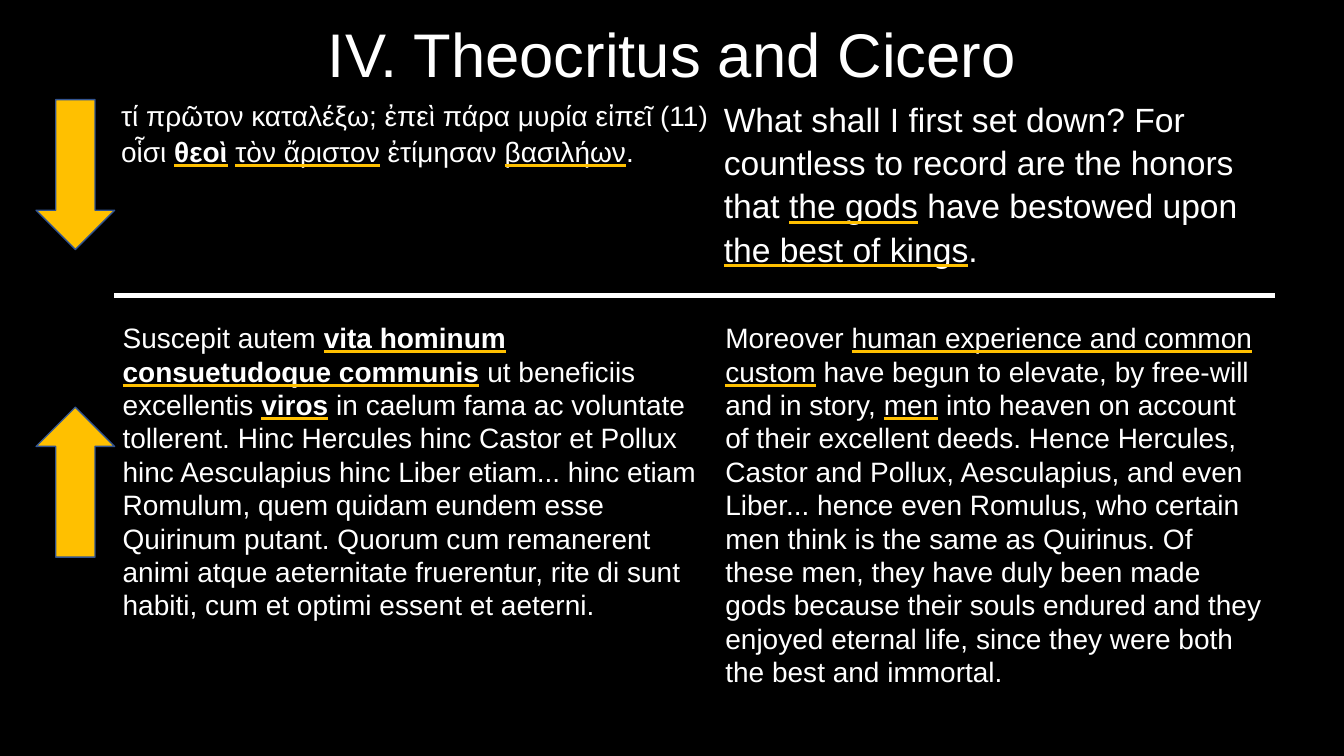
from dataclasses import dataclass
from typing import NamedTuple

from lxml.etree import SubElement
from pptx import Presentation
from pptx.dml.color import RGBColor
from pptx.enum.shapes import MSO_SHAPE
from pptx.enum.text import MSO_ANCHOR, MSO_UNDERLINE, PP_ALIGN
from pptx.oxml.ns import qn
from pptx.util import Cm, Pt


@dataclass(frozen=True)
class Theme:
    font: str = "Arial"
    paper: str = "000000"
    ink: str = "FFFFFF"
    accent: str = "FFC000"
    outline: str = "325491"
    title_pt: int = 44
    large_pt: int = 24
    body_pt: int = 20
    gap_pt: int = 8
    grid_pt: float = 1
    divider_pt: float = 4.5


class Span(NamedTuple):
    text: str
    marked: bool = False
    bold: bool = False


class Passage(NamedTuple):
    row: int
    col: int
    size: int
    spacing: float
    inset: float
    lines: list[list[Span]]


class Arrow(NamedTuple):
    kind: MSO_SHAPE
    top: float


THEME = Theme()
COLUMN_WIDTHS = (15.19, 14.02)
ROW_HEIGHTS = (4.37, 0.64, 0.64, 10.43)
ARROWS = (Arrow(MSO_SHAPE.DOWN_ARROW, 2.51), Arrow(MSO_SHAPE.UP_ARROW, 10.26))

PASSAGES = (
    Passage(0, 0, THEME.body_pt, 1.15, 0.15, [
        [Span("τί πρῶτον καταλέξω; ἐπεὶ πάρα μυρία εἰπεῖ (11)")],
        [Span("οἷσι "), Span("θεοὶ", True, True), Span(" "),
         Span("τὸν ἄριστον", True), Span(" ἐτίμησαν "),
         Span("βασιλήων", True), Span(".")],
    ]),
    Passage(0, 1, THEME.large_pt, 1.15, 0.15, [[
        Span("What shall I first set down? For countless to record are "
             "the honors that "),
        Span("the gods", True), Span(" have bestowed upon "),
        Span("the best of kings", True), Span("."),
    ]]),
    Passage(3, 0, THEME.body_pt, 1.07, 0.19, [[
        Span("Suscepit autem "),
        Span("vita hominum consuetudoque communis", True, True),
        Span(" ut beneficiis excellentis "), Span("viros", True, True),
        Span(" in caelum fama ac voluntate tollerent. Hinc Hercules hinc "
             "Castor et Pollux hinc Aesculapius hinc Liber etiam... hinc "
             "etiam Romulum, quem quidam eundem esse Quirinum putant. Quorum "
             "cum remanerent animi atque aeternitate fruerentur, rite di sunt "
             "habiti, cum et optimi essent et aeterni."),
    ]]),
    Passage(3, 1, THEME.body_pt, 1.07, 0.19, [[
        Span("Moreover "), Span("human experience and common custom", True),
        Span(" have begun to elevate, by free-will and in story, "),
        Span("men", True),
        Span(" into heaven on account of their excellent deeds. Hence "
             "Hercules, Castor and Pollux, Aesculapius, and even Liber... "
             "hence even Romulus, who certain men think is the same as "
             "Quirinus. Of these men, they have duly been made gods because "
             "their souls endured and they enjoyed eternal life, since they "
             "were both the best and immortal."),
    ]]),
)


def rgb(color: str) -> RGBColor:
    return RGBColor.from_string(color)


def add_solid_fill(parent, color: str) -> None:
    fill = SubElement(parent, qn("a:solidFill"))
    SubElement(fill, qn("a:srgbClr"), val=color)


def set_font(font, size: float) -> None:
    font.name = THEME.font
    font.size = Pt(size)
    font.color.rgb = rgb(THEME.ink)


def add_span(p, span: Span) -> None:
    r = p.add_run()
    r.text = span.text
    if span.bold:
        r.font.bold = True
    if span.marked:
        r.font.underline = MSO_UNDERLINE.HEAVY_LINE
        add_solid_fill(SubElement(r.font._element, qn("a:uFill")), THEME.accent)


def write_passage(cell, passage: Passage) -> None:
    cell.margin_left = cell.margin_right = Cm(passage.inset)
    tf = cell.text_frame
    for i, line in enumerate(passage.lines):
        p = tf.add_paragraph() if i else tf.paragraphs[0]
        p.line_spacing = passage.spacing
        set_font(p.font, passage.size)
        for span in line:
            add_span(p, span)


def format_cell(cell, row: int) -> None:
    cell.margin_top = cell.margin_bottom = 0
    tc_pr = cell._tc.get_or_add_tcPr()
    divider_side = {1: "B", 2: "T"}.get(row)
    for side in "LRTB":
        divides = side == divider_side
        width = THEME.divider_pt if divides else THEME.grid_pt
        ln = SubElement(tc_pr, qn(f"a:ln{side}"), w=str(Pt(width)))
        add_solid_fill(ln, THEME.ink if divides else THEME.paper)
    cell.fill.background()
    # Small type lets the empty rows keep their height
    if divider_side:
        p = cell.text_frame.paragraphs[0]
        SubElement(p._p, qn("a:endParaRPr"), sz=str(THEME.gap_pt * 100))


def add_passage_table(s) -> None:
    frame = s.shapes.add_table(
        len(ROW_HEIGHTS), len(COLUMN_WIDTHS), Cm(2.9), Cm(2.44),
        Cm(sum(COLUMN_WIDTHS)), Cm(sum(ROW_HEIGHTS)))
    table = frame.table
    table.first_row = table.horz_banding = False
    for column, width in zip(table.columns, COLUMN_WIDTHS):
        column.width = Cm(width)
    for i, (row, height) in enumerate(zip(table.rows, ROW_HEIGHTS)):
        row.height = Cm(height)
        for cell in row.cells:
            format_cell(cell, i)
    for passage in PASSAGES:
        write_passage(table.cell(passage.row, passage.col), passage)


def add_arrow(s, arrow: Arrow) -> None:
    sp = s.shapes.add_shape(
        arrow.kind, Cm(0.91), Cm(arrow.top), Cm(1.98), Cm(3.78))
    sp.shadow.inherit = False
    sp.fill.solid()
    sp.fill.fore_color.rgb = rgb(THEME.accent)
    sp.line.color.rgb = rgb(THEME.outline)
    sp.line.width = Pt(1)


def add_title(s, text: str) -> None:
    title = s.shapes.title
    title.left, title.top = Cm(2.34), Cm(0.38)
    title.width, title.height = Cm(29.21), Cm(2.13)
    tf = title.text_frame
    tf.text = text
    tf.vertical_anchor = MSO_ANCHOR.MIDDLE
    p = tf.paragraphs[0]
    p.alignment = PP_ALIGN.CENTER
    p.line_spacing = 0.9
    set_font(p.font, THEME.title_pt)


def main() -> None:
    prs = Presentation()
    prs.slide_width, prs.slide_height = Cm(33.87), Cm(19.05)
    s = prs.slides.add_slide(prs.slide_layouts[5])
    s.background.fill.solid()
    s.background.fill.fore_color.rgb = rgb(THEME.paper)

    # Title, passages with translations, reading arrows
    add_title(s, "IV. Theocritus and Cicero")
    add_passage_table(s)
    for arrow in ARROWS:
        add_arrow(s, arrow)
    prs.save("out.pptx")


if __name__ == "__main__":
    main()
